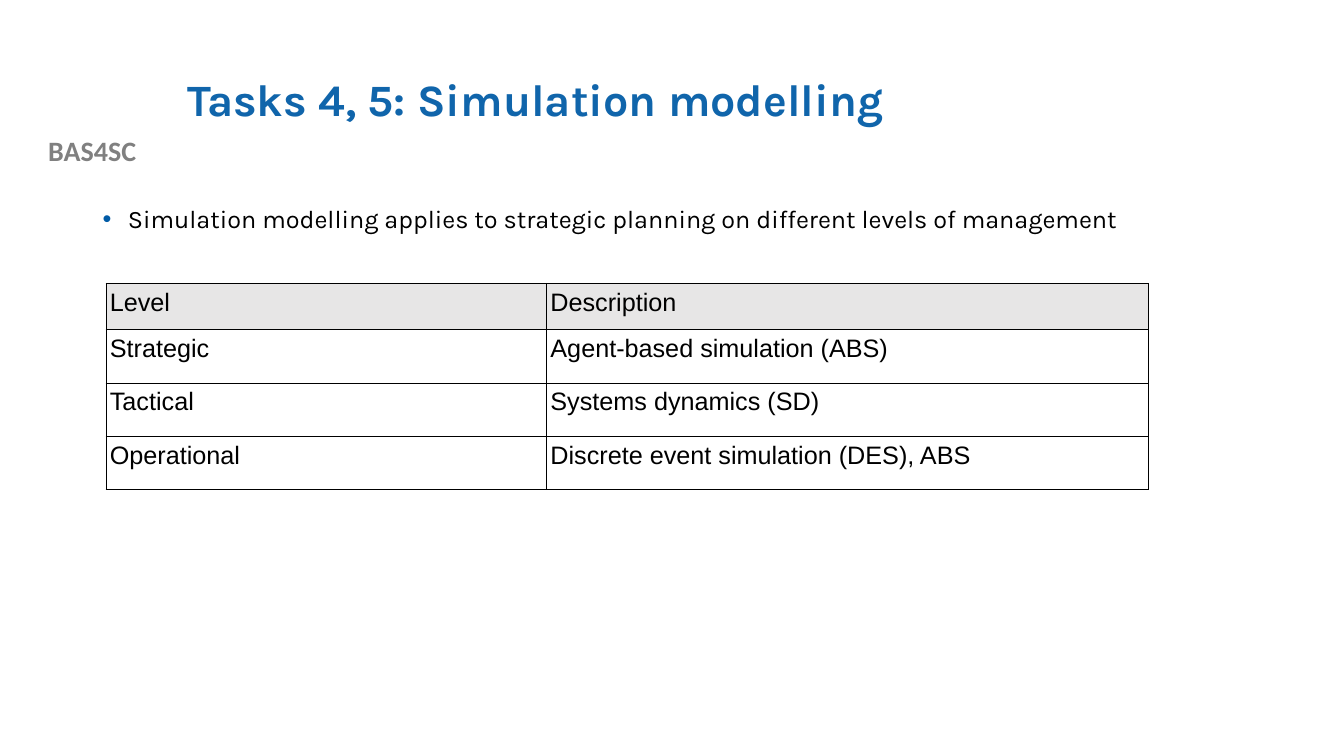
from lxml.etree import SubElement
from pptx import Presentation
from pptx.dml.color import RGBColor
from pptx.enum.text import MSO_ANCHOR, PP_ALIGN
from pptx.oxml.ns import qn
from pptx.util import Pt

TITLE = "Tasks 4, 5: Simulation modelling"
TAG = "BAS4SC"
POINT = "Simulation modelling applies to strategic planning on different levels of management"
LEVELS = [
    ("Level", "Description"),
    ("Strategic", "Agent-based simulation (ABS)"),
    ("Tactical", "Systems dynamics (SD)"),
    ("Operational", "Discrete event simulation (DES), ABS"),
]
COLS = (437, 597)
ROWS = (46, 53, 53, 53)

BLUE = RGBColor(0x10, 0x65, 0xAB)
DOT = RGBColor(0x01, 0x5B, 0xA6)
GREY = RGBColor(0x80, 0x80, 0x80)
PALE = RGBColor(0xE7, 0xE6, 0xE6)
BLACK = RGBColor(0, 0, 0)
SCALE = 9144


def px(num):
    return num * SCALE


def style(para, face, size, color, bold=False):
    for run in para.runs:
        font = run.font
        font.name, font.size, font.bold = face, Pt(size), bold
        font.color.rgb = color


def add_text(slide, box, text):
    frame = slide.shapes.add_textbox(*map(px, box)).text_frame
    frame.word_wrap = True
    frame.text = text
    return frame.paragraphs[0]


def add_dot(para):
    props = para._p.get_or_add_pPr()
    props.set("marL", str(px(25)))
    props.set("indent", str(px(-25)))
    color = SubElement(props, qn("a:buClr"))
    SubElement(color, qn("a:srgbClr"), val=str(DOT))
    SubElement(props, qn("a:buFont"), typeface="Arial")
    SubElement(props, qn("a:buChar"), char="•")


def add_edges(cell):
    props = cell._tc.get_or_add_tcPr()
    for side in ("lnL", "lnR", "lnT", "lnB"):
        line = SubElement(props, qn("a:" + side), w=str(Pt(0.57)))
        fill = SubElement(line, qn("a:solidFill"))
        SubElement(fill, qn("a:srgbClr"), val=str(BLACK))


def set_title(slide):
    title = slide.shapes.title
    title.left, title.top, title.width, title.height = map(px, (176, 40, 1066, 122))
    frame = title.text_frame
    frame.text = TITLE
    frame.vertical_anchor = MSO_ANCHOR.MIDDLE
    para = frame.paragraphs[0]
    para.alignment = PP_ALIGN.LEFT
    para.line_spacing = 0.9
    style(para, "Karla", 32, BLUE, True)


def add_grid(slide):
    box = map(px, (105, 281, sum(COLS), sum(ROWS)))
    table = slide.shapes.add_table(len(ROWS), len(COLS), *box).table
    for col, width in zip(table.columns, COLS):
        col.width = px(width)
    for r, (row, height) in enumerate(zip(table.rows, ROWS)):
        row.height = px(height)
        for cell, text in zip(row.cells, LEVELS[r]):
            cell.text = text
            cell.margin_left = cell.margin_right = px(4)
            cell.margin_top = cell.margin_bottom = px(5)
            add_edges(cell)
            if r == 0:
                cell.fill.solid()
                cell.fill.fore_color.rgb = PALE
            else:
                cell.fill.background()
            style(cell.text_frame.paragraphs[0], "Arial", 18, BLACK)


def main():
    deck = Presentation()
    deck.slide_width, deck.slide_height = px(1333), px(750)
    slide = deck.slides.add_slide(deck.slide_layouts[5])
    set_title(slide)
    tag = add_text(slide, (0, 128, 183, 43), TAG)
    tag.alignment = PP_ALIGN.CENTER
    style(tag, "Calibri", 20, GREY, True)
    point = add_text(slide, (92, 200, 1150, 476), POINT)
    add_dot(point)
    point.line_spacing = 0.9
    style(point, "Karla", 18, BLACK)
    add_grid(slide)
    deck.save("out.pptx")


if __name__ == "__main__":
    main()
